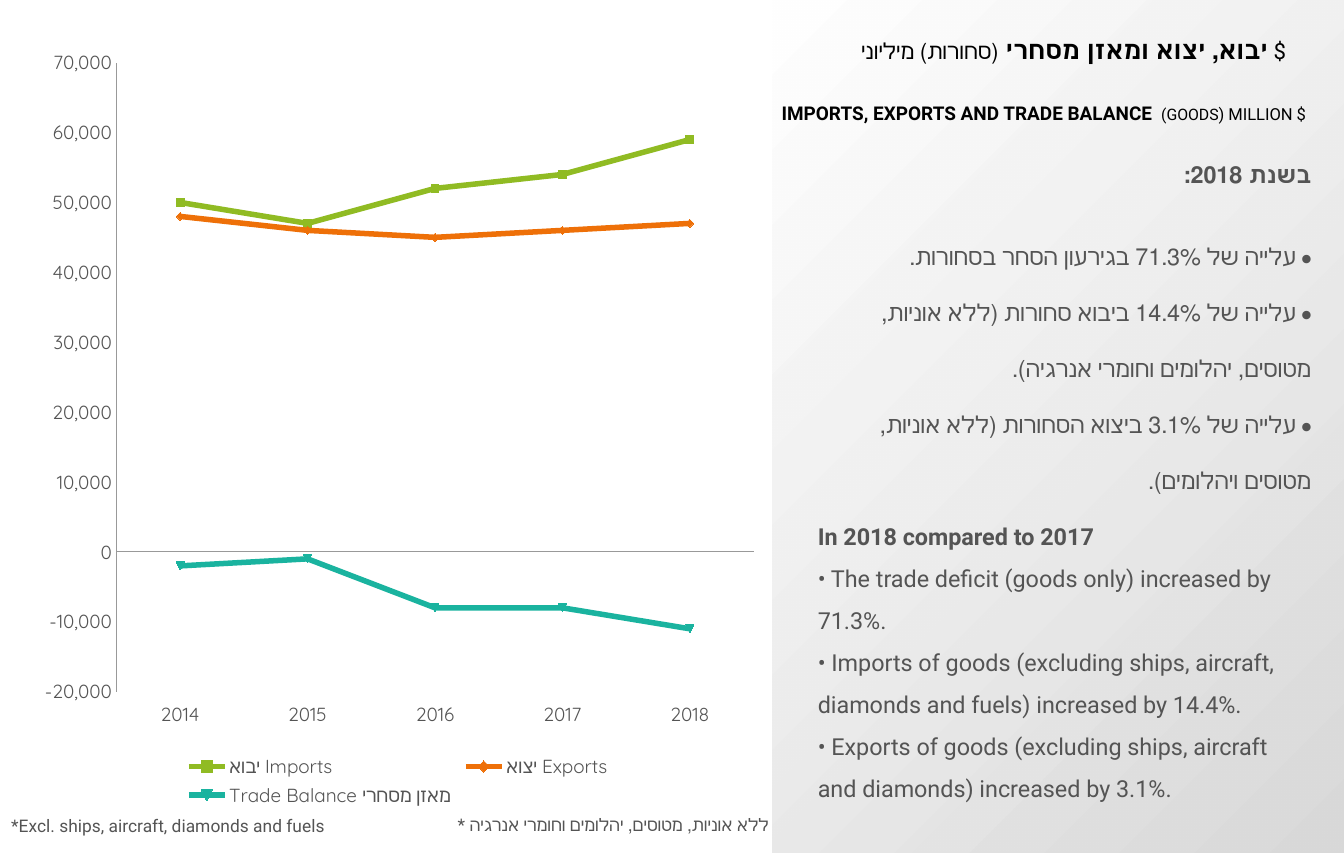
from dataclasses import dataclass

from pptx import Presentation
from pptx.chart.data import CategoryChartData
from pptx.dml.color import RGBColor
from pptx.enum.chart import (XL_CHART_TYPE, XL_LEGEND_POSITION, XL_MARKER_STYLE,
                             XL_TICK_LABEL_POSITION, XL_TICK_MARK)
from pptx.enum.shapes import MSO_SHAPE
from pptx.enum.text import MSO_ANCHOR, MSO_AUTO_SIZE, PP_ALIGN
from pptx.oxml import parse_xml
from pptx.oxml.ns import nsdecls, qn
from pptx.util import Emu, Pt
from lxml.etree import SubElement

Box = tuple[int, int, int, int]

PX = 9000  # the page is 1200 by 762 px
FONT = "Roboto"
COLORS = {"black": "000000", "text": "545454", "axis": "999999",
          "panel_dark": "D9D9D9", "panel_light": "FFFFFF",
          "imports": "90BB23", "exports": "EE7008", "balance": "1AB39F"}


@dataclass
class Span:
    text: str
    size: float
    bold: bool = False
    color: str = "text"


@dataclass
class Para:
    spans: list[Span]
    align: PP_ALIGN = PP_ALIGN.LEFT
    spacing: float = 1.0
    before: float = 0
    rtl: bool = False


@dataclass
class TextBlock:
    box: Box
    paras: list[Para]
    wrap: bool = True


@dataclass
class Line:
    name: str
    values: tuple[int, ...]
    color: str


def rgb(name: str) -> RGBColor:
    return RGBColor.from_string(COLORS[name])


def px(*lengths: int) -> list[Emu]:
    return [Emu(length * PX) for length in lengths]


def set_all(target, values: dict) -> None:
    for name, value in values.items():
        setattr(target, name, value)


def write(frame, block: TextBlock) -> None:
    set_all(frame, {"word_wrap": block.wrap, "auto_size": MSO_AUTO_SIZE.NONE})
    for index, item in enumerate(block.paras):
        para = frame.paragraphs[0] if index == 0 else frame.add_paragraph()
        set_all(para, {"alignment": item.align, "line_spacing": item.spacing,
                       "space_before": Pt(item.before), "space_after": Pt(0)})
        properties = para._p.get_or_add_pPr()
        for name, value in {"marL": "0", "indent": "0", "rtl": str(int(item.rtl))}.items():
            properties.set(name, value)
        SubElement(properties, qn("a:buNone"))
        for span in item.spans:
            run = para.add_run()
            run.text = span.text
            set_all(run.font, {"name": FONT, "size": Pt(span.size), "bold": span.bold})
            run.font.color.rgb = rgb(span.color)


def place(shape, box: Box) -> None:
    set_all(shape, dict(zip(("left", "top", "width", "height"), px(*box))))


def set_layout(parent, part: Box, chart_box: Box, inner: bool) -> None:
    """Fix the place of a chart part, given in px from the chart's corner."""
    for old in parent.findall(qn("c:layout")):
        parent.remove(old)
    whole = chart_box[2:] * 2
    target = '<c:layoutTarget val="inner"/>' if inner else ""
    sizes = "".join(f'<c:{key} val="{length / full:.4f}"/>'
                    for key, length, full in zip("xywh", part, whole))
    layout = parse_xml(f'<c:layout {nsdecls("c")}><c:manualLayout>{target}'
                       f'<c:xMode val="edge"/><c:yMode val="edge"/>{sizes}'
                       '</c:manualLayout></c:layout>')
    parent.insert(0 if inner else 1, layout)


def add_panel(slide, box: Box) -> None:
    panel = slide.shapes.add_shape(MSO_SHAPE.RECTANGLE, *px(*box))
    panel.shadow.inherit = False
    panel.line.fill.background()
    panel.fill.background()
    gradient = parse_xml(
        f'<a:gradFill {nsdecls("a")} rotWithShape="1"><a:gsLst>'
        f'<a:gs pos="0"><a:srgbClr val="{COLORS["panel_dark"]}"/></a:gs>'
        f'<a:gs pos="100000"><a:srgbClr val="{COLORS["panel_light"]}">'
        '<a:alpha val="89000"/></a:srgbClr></a:gs></a:gsLst>'
        '<a:path path="circle"><a:fillToRect l="100000" t="100000"/></a:path></a:gradFill>')
    properties = panel.element.spPr
    properties.replace(properties.find(qn("a:noFill")), gradient)
    slide.shapes.title.element.addprevious(panel.element)


def add_trade_chart(slide, box: Box, lines: list[Line]) -> None:
    data = CategoryChartData(number_format="#,##0")
    data.categories = [str(year) for year in range(2014, 2019)]
    for line in lines:
        data.add_series(line.name, line.values)
    chart = slide.shapes.add_chart(XL_CHART_TYPE.LINE_MARKERS, *px(*box), data).chart
    set_all(chart, {"has_title": False, "has_legend": True})
    set_all(chart.font, {"name": "Quicksand", "size": Pt(12)})
    chart.font.color.rgb = rgb("text")
    set_all(chart.legend, {"position": XL_LEGEND_POSITION.BOTTOM, "include_in_layout": False})

    # Axes
    for axis in (chart.category_axis, chart.value_axis):
        set_all(axis, {"has_major_gridlines": False, "major_tick_mark": XL_TICK_MARK.NONE,
                       "minor_tick_mark": XL_TICK_MARK.NONE})
        axis.format.line.color.rgb = rgb("axis")
        axis.format.line.width = Pt(0.75)
    chart.category_axis.tick_label_position = XL_TICK_LABEL_POSITION.LOW
    set_all(chart.value_axis, {"minimum_scale": -20000, "maximum_scale": 70000,
                               "major_unit": 10000})
    set_all(chart.value_axis.tick_labels, {"number_format": "#,##0",
                                           "number_format_is_linked": False})

    # Series
    plot = chart.plots[0]
    plot.vary_by_categories = False
    for series, line in zip(plot.series, lines):
        series.smooth = False
        series.format.line.color.rgb = rgb(line.color)
        series.format.line.width = Pt(3.5)
        set_all(series.marker, {"style": XL_MARKER_STYLE.AUTOMATIC, "size": 5})
        series.marker.format.fill.solid()
        series.marker.format.fill.fore_color.rgb = rgb(line.color)
        series.marker.format.line.color.rgb = rgb(line.color)

    # Plot area and legend
    area = chart._chartSpace.find(f'.//{qn("c:plotArea")}')
    set_layout(area, (77, 23, 569, 562), box, inner=True)
    set_layout(chart.legend._element, (134, 637, 389, 55), box, inner=False)


LINES = [
    Line("יבוא Imports", (50000, 47000, 52000, 54000, 59000), "imports"),
    Line("יצוא Exports", (48000, 46000, 45000, 46000, 47000), "exports"),
    Line("Trade Balance מאזן מסחרי", (-2000, -1000, -8000, -8000, -11000), "balance"),
]
TITLE = TextBlock((665, 85, 534, 31), [Para([
    Span("IMPORTS, EXPORTS AND TRADE BALANCE ", 12, True, "black"),
    Span(" (GOODS", 10, color="black"), Span(") MILLION $", 10.5, color="black"),
], PP_ALIGN.CENTER, 0.9)])


def hebrew(text: str, bold: bool = False, spacing: float = 2, before: float = 0) -> Para:
    return Para([Span(text, 14.8, bold)], PP_ALIGN.RIGHT, spacing, before, True)


def english(text: str, bold: bool = False, spacing: float = 1.5) -> Para:
    return Para([Span(text, 14.8, bold)], spacing=spacing)


BODY = TextBlock((720, 141, 461, 611), [
    hebrew("בשנת 2018:", True, 0.9),
    hebrew("• עלייה של 71.3% בגירעון הסחר בסחורות.", before=16),
    hebrew("• עלייה של 14.4% ביבוא סחורות (ללא אוניות, מטוסים, יהלומים וחומרי אנרגיה)."),
    hebrew("• עלייה של 3.1% ביצוא הסחורות (ללא אוניות, מטוסים ויהלומים)."),
    english("In 2018 compared to 2017", True, 2),
    english("• The trade deficit (goods only) increased by 71.3%."),
    english("• Imports of goods (excluding ships, aircraft, diamonds and fuels) "
            "increased by 14.4%."),
    english("• Exports of goods (excluding ships, aircraft and diamonds) increased by 3.1%."),
])
LABELS = [
    TextBlock((735, 29, 447, 35), [Para([
        Span("יבוא, יצוא ומאזן מסחרי ", 16, True, "black"),
        Span("(סחורות) מיליוני $", 14, color="black")], PP_ALIGN.CENTER, 0.9)], wrap=False),
    TextBlock((184, 722, 513, 29), [Para([
        Span("* ללא אוניות, מטוסים, יהלומים וחומרי אנרגיה", 11)], PP_ALIGN.RIGHT)]),
    TextBlock((0, 723, 315, 29), [Para([
        Span("*Excl. ships, aircraft, diamonds and fuels", 11)])]),
]


def main() -> None:
    deck = Presentation()
    deck.slide_width, deck.slide_height = px(1200, 762)
    page = deck.slides.add_slide(deck.slide_layouts[1])
    add_panel(page, (690, 0, 510, 762))
    add_trade_chart(page, (27, 33, 659, 693), LINES)

    # Title and commentary
    for holder, block, anchor in ((page.shapes.title, TITLE, MSO_ANCHOR.BOTTOM),
                                  (page.placeholders[1], BODY, MSO_ANCHOR.TOP)):
        place(holder, block.box)
        write(holder.text_frame, block)
        holder.text_frame.vertical_anchor = anchor

    # Hebrew heading and footnotes
    for block in LABELS:
        write(page.shapes.add_textbox(*px(*block.box)).text_frame, block)
    deck.save("out.pptx")


if __name__ == "__main__":
    main()
